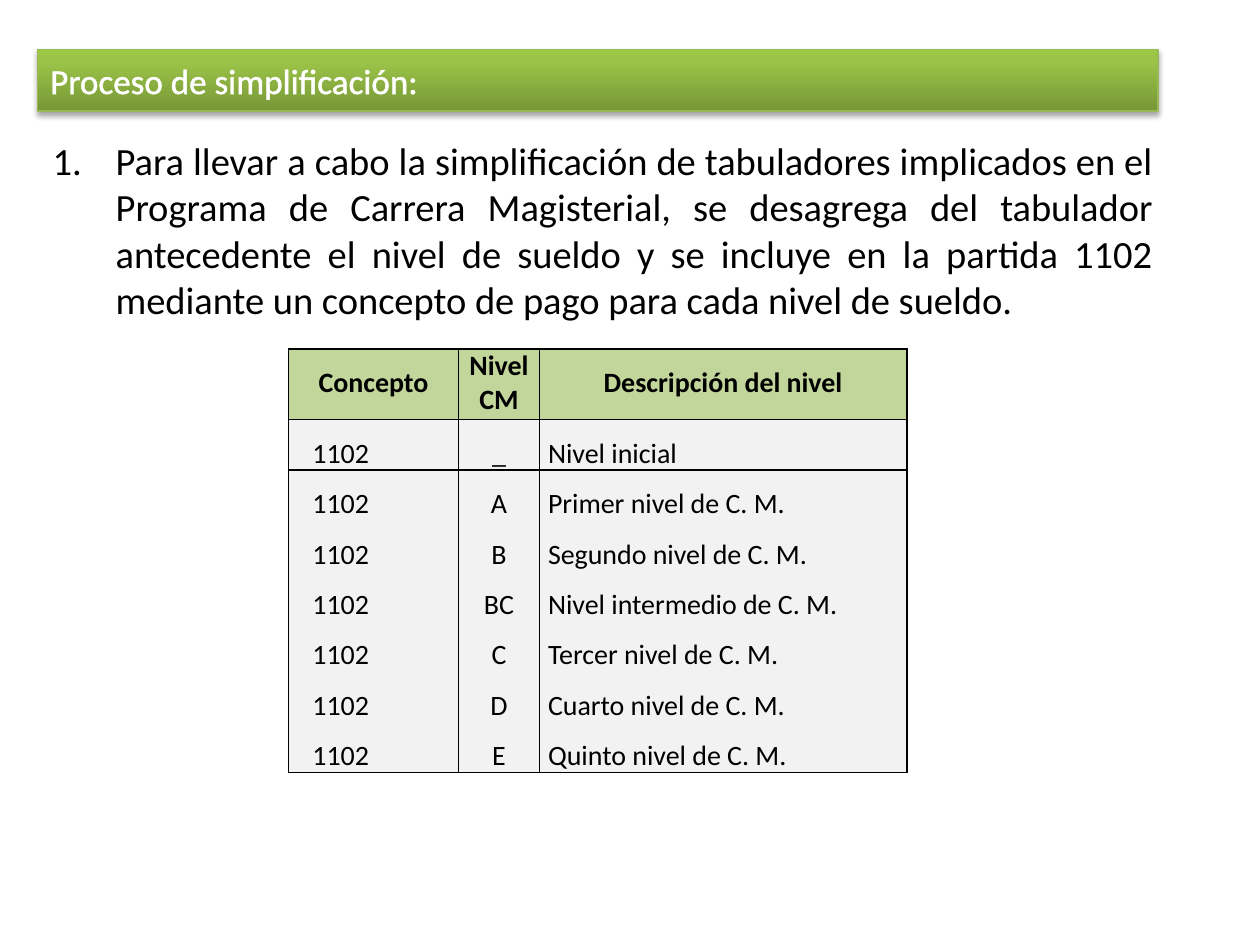
import pptx
import pptx.util
import pptx.dml.color
import pptx.enum.shapes
import pptx.enum.text
import pptx.oxml
import pptx.oxml.ns

Inches, Pt = pptx.util.Inches, pptx.util.Pt
RGB = pptx.dml.color.RGBColor.from_string
ALIGN = pptx.enum.text.PP_ALIGN
ANCHOR = pptx.enum.text.MSO_ANCHOR

# Content
HEADING = "Proceso de simplificación:"
STEP = (
    "Para llevar a cabo la simplificación de tabuladores implicados en el "
    "Programa de Carrera Magisterial, se desagrega del tabulador antecedente "
    "el nivel de sueldo y se incluye en la partida 1102 mediante un concepto "
    "de pago para cada nivel de sueldo."
)
HEADERS = ("Concepto", "Nivel CM", "Descripción del nivel")
CONCEPT = "1102"
LEVELS = [
    ("_", "Nivel inicial"),
    ("A", "Primer nivel de C. M."),
    ("B", "Segundo nivel de C. M."),
    ("BC", "Nivel intermedio de C. M."),
    ("C", "Tercer nivel de C. M."),
    ("D", "Cuarto nivel de C. M."),
    ("E", "Quinto nivel de C. M."),
]

THEME = {
    "font": "Calibri",
    "heading_size": 20, "step_size": 22, "table_size": 16,
    "text": "000000", "heading_text": "FFFFFF", "border": "000000",
    "banner_stops": [(0, "779737"), (80, "9BC348"), (100, "9DC746")],
    "banner_line": "98B955",
    "header_fill": "C2D69B", "body_fill": "F2F2F2",
}
COLUMN_WIDTHS = (1.35, 0.64, 2.92)
ROW_HEIGHTS = [0.56, 0.31] + [0.36] * (len(LEVELS) - 1)
COLUMN_ALIGN = (ALIGN.LEFT, ALIGN.CENTER, ALIGN.LEFT)
NO_STYLE_TABLE = "{2D5ABB26-0587-4C30-8999-92F81FD0307C}"


def xml(markup):
    """Parse one element, declaring the drawing namespace on its tag."""
    tag, rest = markup.split(" ", 1)
    return pptx.oxml.parse_xml(f"{tag} {pptx.oxml.ns.nsdecls('a')} {rest}")


def solid(color):
    return f'<a:solidFill><a:srgbClr val="{color}"/></a:solidFill>'


def style(paragraph, size, color, bold=False):
    font = paragraph.font
    font.name, font.size, font.bold = THEME["font"], Pt(size), bold
    font.color.rgb = RGB(color)


def add_banner(slide):
    banner = slide.shapes.add_shape(
        pptx.enum.shapes.MSO_SHAPE.RECTANGLE,
        Inches(0.3), Inches(0.39), Inches(8.89), Inches(0.49))
    banner.line.color.rgb = RGB(THEME["banner_line"])
    banner.line.width = Pt(0.75)

    # Gradient running upwards, and a soft shadow below
    stops = "".join(
        f'<a:gs pos="{position * 1000}"><a:srgbClr val="{color}"/></a:gs>'
        for position, color in THEME["banner_stops"])
    properties = banner._element.spPr
    properties.insert(2, xml(
        f'<a:gradFill rotWithShape="1"><a:gsLst>{stops}</a:gsLst>'
        '<a:lin ang="16200000" scaled="0"/></a:gradFill>'))
    properties.append(xml(
        f'<a:effectLst ><a:outerShdw blurRad="{Pt(3.1)}" dist="{Pt(1.8)}" '
        'dir="5400000" rotWithShape="0"><a:srgbClr val="000000">'
        '<a:alpha val="35000"/></a:srgbClr></a:outerShdw></a:effectLst>'))

    frame = banner.text_frame
    frame.word_wrap = False
    frame.vertical_anchor = ANCHOR.MIDDLE
    heading = frame.paragraphs[0]
    heading.text = HEADING
    heading.alignment = ALIGN.LEFT
    style(heading, THEME["heading_size"], THEME["heading_text"])
    heading.runs[0]._r.get_or_add_rPr().insert(0, xml(
        f'<a:ln w="{Pt(1.45)}">{solid(THEME["heading_text"])}</a:ln>'))


def add_step(slide):
    frame = slide.shapes.add_textbox(
        Inches(0.32), Inches(1.04), Inches(8.93), Inches(1.52)).text_frame
    frame.word_wrap = True
    step = frame.paragraphs[0]
    step.text = STEP
    step.alignment = ALIGN.JUSTIFY
    numbering = step._p.get_or_add_pPr()
    numbering.set("marL", str(Inches(0.5)))
    numbering.set("indent", str(-Inches(0.5)))
    numbering.append(xml('<a:buFont typeface="+mj-lt"/>'))
    numbering.append(xml('<a:buAutoNum type="arabicPeriod"/>'))
    style(step, THEME["step_size"], THEME["text"])


def add_borders(cell, widths):
    """Draw the given sides; widths maps L, R, T, B to points, in that order."""
    for side, width in widths.items():
        cell._tc.get_or_add_tcPr().append(xml(
            f'<a:ln{side} w="{Pt(width)}">{solid(THEME["border"])}</a:ln{side}>'))


def add_levels_table(slide):
    rows = [HEADERS] + [(CONCEPT, *level) for level in LEVELS]
    levels = slide.shapes.add_table(
        len(rows), len(HEADERS), Inches(2.29), Inches(2.77),
        Inches(sum(COLUMN_WIDTHS)), Inches(sum(ROW_HEIGHTS))).table
    levels.first_row = levels.horz_banding = False
    levels._tbl.tblPr.find(pptx.oxml.ns.qn("a:tableStyleId")).text = NO_STYLE_TABLE
    for column, width in zip(levels.columns, COLUMN_WIDTHS):
        column.width = Inches(width)
    for row, height in zip(levels.rows, ROW_HEIGHTS):
        row.height = Inches(height)

    for r, texts in enumerate(rows):
        is_header = r == 0
        for c, text in enumerate(texts):
            cell = levels.cell(r, c)
            cell.margin_left = cell.margin_right = Inches(0.07)
            cell.margin_top = cell.margin_bottom = 0

            # Grid lines: columns throughout, rows only around header and foot
            widths = {"L": 1, "R": 1.5 if c == len(HEADERS) - 1 else 1}
            if r <= 1:
                widths["T"] = 1
            if is_header or r == len(rows) - 1:
                widths["B"] = 1
            add_borders(cell, widths)
            cell.fill.solid()
            cell.fill.fore_color.rgb = RGB(
                THEME["header_fill" if is_header else "body_fill"])

            entry = cell.text_frame.paragraphs[0]
            entry.text = text
            entry.alignment = ALIGN.CENTER if is_header else COLUMN_ALIGN[c]
            if not (is_header and c == 1):
                entry.line_spacing = 1.5
            if c == 0 and not is_header:
                entry._p.get_or_add_pPr().set("marL", str(Inches(0.12)))
            style(entry, THEME["table_size"], THEME["text"], is_header)


def main():
    deck = pptx.Presentation()
    deck.slide_width, deck.slide_height = Inches(10), Inches(7.5)
    slide = deck.slides.add_slide(deck.slide_layouts[6])
    add_banner(slide)
    add_step(slide)
    add_levels_table(slide)
    deck.save("out.pptx")


if __name__ == "__main__":
    main()
